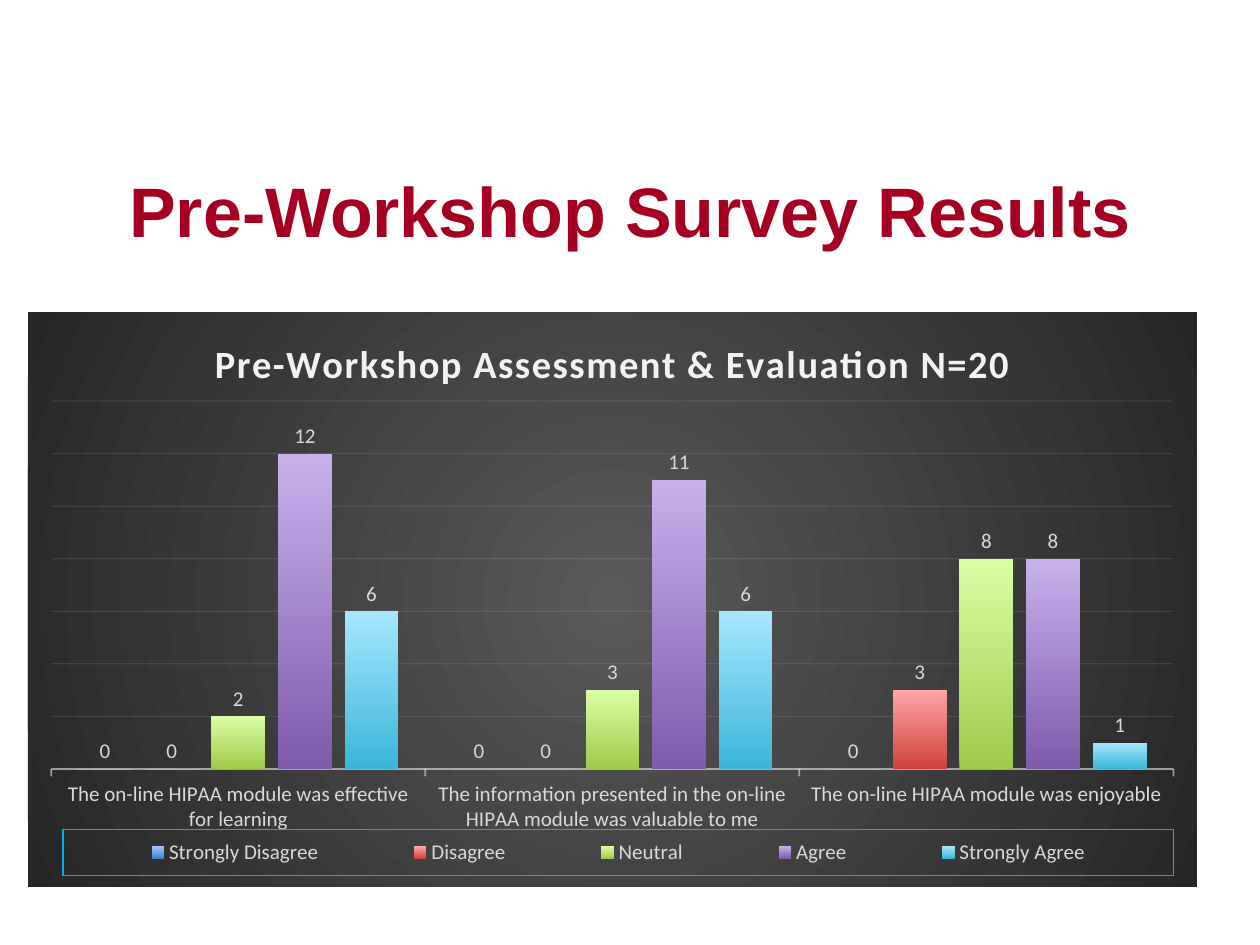
from dataclasses import dataclass

from pptx import Presentation
from pptx.chart.data import CategoryChartData
from pptx.dml.color import RGBColor
from pptx.enum.chart import XL_CHART_TYPE, XL_LABEL_POSITION, XL_LEGEND_POSITION, XL_TICK_LABEL_POSITION, XL_TICK_MARK
from pptx.enum.text import MSO_ANCHOR, PP_ALIGN
from pptx.oxml import parse_xml
from pptx.oxml.ns import nsdecls, qn
from pptx.util import Emu, Pt

PX = 914400 / 126
NS = nsdecls("c", "a")
PALE = "F2F2F2"
LABEL = "D9D9D9"


@dataclass
class Answer:
    name: str
    values: tuple[int, ...]
    bottom: str
    top: str


QUESTIONS = [
    "The on-line HIPAA module was effective for learning",
    "The information presented in the on-line HIPAA module was valuable to me",
    "The on-line HIPAA module was enjoyable",
]
ANSWERS = [
    Answer("Strongly Disagree", (0, 0, 0), "3F80CE", "A4C4FF"),
    Answer("Disagree", (0, 0, 3), "D1403C", "FFA6A5"),
    Answer("Neutral", (2, 3, 8), "A0CA4A", "DAFFA5"),
    Answer("Agree", (12, 11, 8), "7F5BAB", "C8B0ED"),
    Answer("Strongly Agree", (6, 6, 1), "39B7D8", "A7E6FF"),
]


def px(n: int) -> Emu:
    return Emu(round(n * PX))


def rgb(color: str) -> RGBColor:
    return RGBColor.from_string(color)


def style_font(font, name: str, size: int, color: str, bold: bool = False) -> None:
    font.name, font.size, font.bold = name, Pt(size), bold
    font.color.rgb = rgb(color)


def style_line(line, color: str, width: float, opacity: int) -> None:
    line.width = Pt(width)
    line.color.rgb = rgb(color)
    clr = next(line.format_element.iter(qn("a:srgbClr"))) if hasattr(line, "format_element") else None
    if clr is None:
        ln = line.fill._xPr
        clr = next(ln.iter(qn("a:srgbClr")))
    clr.append(parse_xml(f'<a:alpha {NS} val="{opacity * 1000}"/>'))


def manual_layout(x: float, y: float, w: float, h: float, inner: bool = False):
    target = '<c:layoutTarget val="inner"/>' if inner else ""
    return parse_xml(
        f'<c:layout {NS}><c:manualLayout>{target}<c:xMode val="edge"/><c:yMode val="edge"/>'
        f'<c:x val="{x}"/><c:y val="{y}"/><c:w val="{w}"/><c:h val="{h}"/>'
        "</c:manualLayout></c:layout>"
    )


def set_layout(parent, index: int, layout) -> None:
    for old in parent.findall(qn("c:layout")):
        parent.remove(old)
    parent.insert(index, layout)


def add_title(s) -> None:
    sp = s.shapes.title
    sp.left, sp.top, sp.width, sp.height = px(63), px(130), px(1134), px(158)
    tf = sp.text_frame
    tf.word_wrap = True
    tf.vertical_anchor = MSO_ANCHOR.MIDDLE
    p = tf.paragraphs[0]
    p.alignment = PP_ALIGN.CENTER
    r = p.add_run()
    r.text = "Pre-Workshop Survey Results"
    style_font(r.font, "Arial", 40, "A50021", True)


def style_background(chart) -> None:
    space = chart.font._element.getparent().getparent().getparent().getparent()
    space.find(qn("c:chart")).addnext(parse_xml(
        f'<c:spPr {NS}><a:gradFill><a:gsLst>'
        '<a:gs pos="0"><a:srgbClr val="595959"/></a:gs>'
        '<a:gs pos="100000"><a:srgbClr val="262626"/></a:gs></a:gsLst>'
        '<a:path path="circle"><a:fillToRect l="50000" t="50000" r="50000" b="50000"/></a:path>'
        "</a:gradFill><a:ln><a:noFill/></a:ln></c:spPr>"
    ))


def style_heading(chart) -> None:
    chart.has_title = True
    chart.chart_title.include_in_layout = False
    p = chart.chart_title.text_frame.paragraphs[0]
    r = p.add_run()
    r.text = "Pre-Workshop Assessment & Evaluation N=20"
    style_font(r.font, "Calibri", 22, PALE, True)
    r.font._element.set("spc", "100")


def style_axes(chart) -> None:
    cat = chart.category_axis
    cat.major_tick_mark = XL_TICK_MARK.OUTSIDE
    cat.tick_label_position = XL_TICK_LABEL_POSITION.LOW
    style_font(cat.tick_labels.font, "Calibri", 12, LABEL)
    style_line(cat.format.line, PALE, 1, 54)
    val = chart.value_axis
    val.visible = False
    val.minimum_scale, val.maximum_scale, val.major_unit = 0, 14, 2
    val.has_major_gridlines = True
    style_line(val.major_gridlines.format.line, PALE, 0.75, 10)


def style_legend(chart) -> None:
    chart.has_legend = True
    legend = chart.legend
    legend.position = XL_LEGEND_POSITION.BOTTOM
    legend.include_in_layout = False
    style_font(legend.font, "Calibri", 12, LABEL)
    el = legend._element
    set_layout(el, 1, manual_layout(0.03, 0.9, 0.95, 0.08))
    el.find(qn("c:txPr")).addprevious(parse_xml(
        f'<c:spPr {NS}><a:noFill/><a:ln w="9525"><a:solidFill>'
        '<a:srgbClr val="00B0F0"/></a:solidFill></a:ln></c:spPr>'
    ))


def style_bars(plot) -> None:
    plot.gap_width, plot.overlap = 100, -24
    plot.vary_by_categories = False
    for series, answer in zip(plot.series, ANSWERS):
        fill = series.format.fill
        fill.gradient()
        fill.gradient_angle = 90
        for stop, color in zip(fill.gradient_stops, (answer.bottom, answer.top)):
            stop.color.rgb = rgb(color)
        labels = series.data_labels
        labels.show_value = True
        labels.position = XL_LABEL_POSITION.OUTSIDE_END
        style_font(labels.font, "Calibri", 12, LABEL)


def add_survey_chart(s) -> None:
    data = CategoryChartData()
    data.categories = QUESTIONS
    for answer in ANSWERS:
        data.add_series(answer.name, answer.values)
    frame = s.shapes.add_chart(
        XL_CHART_TYPE.COLUMN_CLUSTERED, px(28), px(312), px(1169), px(575), data
    )
    chart = frame.chart
    style_font(chart.font, "Calibri", 10, "000000")
    style_background(chart)
    style_heading(chart)
    style_axes(chart)
    style_legend(chart)
    style_bars(chart.plots[0])
    plot_area = chart.plots[0]._element.getparent()
    set_layout(plot_area, 0, manual_layout(0.02, 0.155, 0.96, 0.64, inner=True))


def main() -> None:
    prs = Presentation()
    prs.slide_width, prs.slide_height = px(1260), px(945)
    s = prs.slides.add_slide(prs.slide_layouts[5])
    add_title(s)
    add_survey_chart(s)
    prs.save("out.pptx")


if __name__ == "__main__":
    main()
